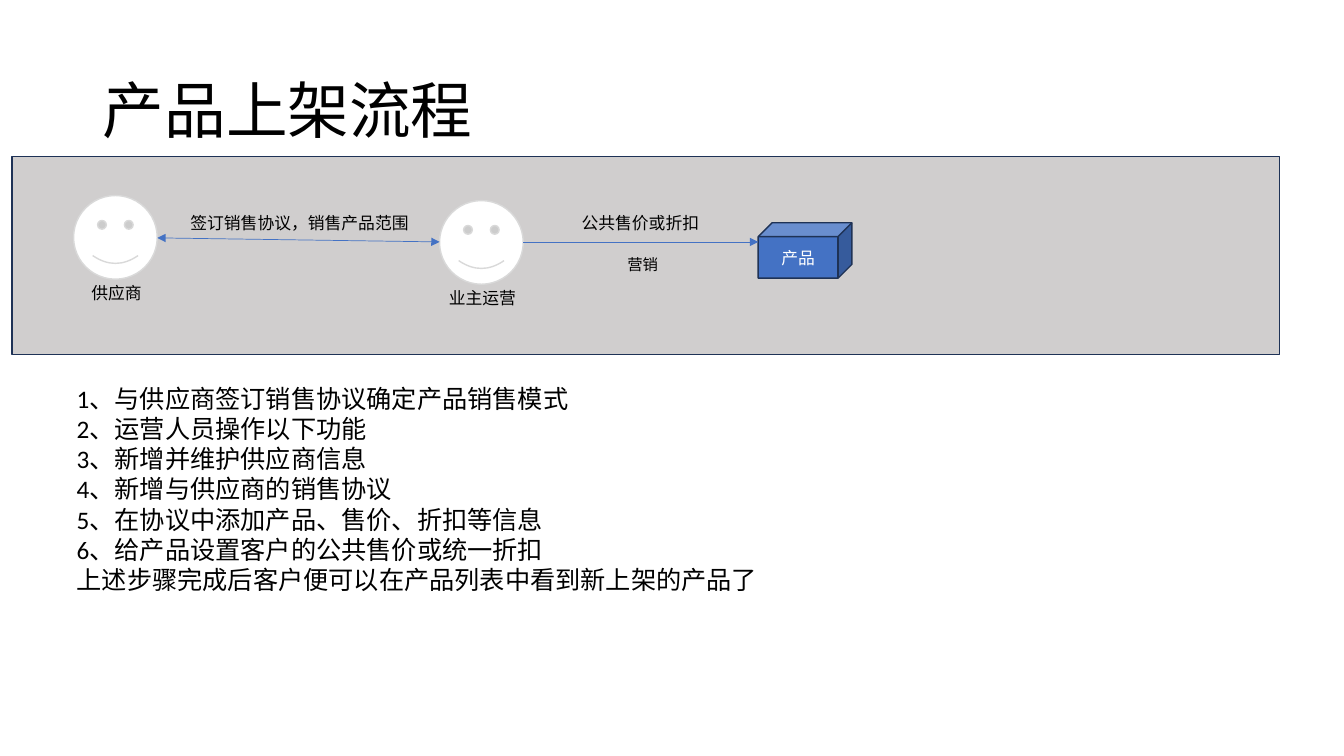
from lxml.etree import SubElement as add_element
from pptx import Presentation
from pptx.dml.color import RGBColor
from pptx.enum.shapes import MSO_CONNECTOR as Connector, MSO_SHAPE as Shape
from pptx.enum.text import MSO_ANCHOR as Anchor, MSO_AUTO_SIZE as AutoSize, PP_ALIGN as Align
from pptx.oxml.ns import qn
from pptx.util import Inches, Pt


def paint(shape, fill, line):
    shape.shadow.inherit = False
    shape.fill.solid()
    shape.fill.fore_color.rgb = RGBColor.from_string(fill)
    shape.line.color.rgb = RGBColor.from_string(line)
    shape.line.width = Pt(1)


def write(shape, lines, size, color="000000", align=Align.LEFT, anchor=Anchor.TOP, spacing=1.0):
    frame = shape.text_frame
    frame.text = "\n".join(lines)
    frame_format = {"word_wrap": True, "auto_size": AutoSize.NONE, "vertical_anchor": anchor}
    for name, value in frame_format.items():
        setattr(frame, name, value)
    paragraph_format = {"alignment": align, "line_spacing": spacing, "space_before": Pt(0)}
    for paragraph in frame.paragraphs:
        for name, value in paragraph_format.items():
            setattr(paragraph, name, value)
        font = paragraph.runs[0].font
        font.name = "Calibri"
        font.size = Pt(size)
        font.color.rgb = RGBColor.from_string(color)


presentation = Presentation()
presentation.slide_width = Inches(13.33)
presentation.slide_height = Inches(7.5)
slide = presentation.slides.add_slide(presentation.slide_layouts[1])
title, steps = slide.placeholders

placeholder_boxes = [(title, (0.92, 0.4, 11.5, 1.45)), (steps, (0.66, 3.75, 12.03, 2.22))]
for placeholder, box in placeholder_boxes:
    for name, value in zip(("left", "top", "width", "height"), box):
        setattr(placeholder, name, Inches(value))

write(title, ["产品上架流程"], 44, anchor=Anchor.MIDDLE, spacing=0.9)
write(steps, [
    "1、与供应商签订销售协议确定产品销售模式",
    "2、运营人员操作以下功能",
    "3、新增并维护供应商信息",
    "4、新增与供应商的销售协议",
    "5、在协议中添加产品、售价、折扣等信息",
    "6、给产品设置客户的公共售价或统一折扣",
    "上述步骤完成后客户便可以在产品列表中看到新上架的产品了",
], 18)
for paragraph in steps.text_frame.paragraphs:
    properties = paragraph._p.get_or_add_pPr()
    properties.set("marL", "0")
    properties.set("indent", "0")
    add_element(properties, qn("a:buNone"))

band = slide.shapes.add_shape(Shape.RECTANGLE, Inches(0.12), Inches(1.55), Inches(12.57), Inches(1.97))
paint(band, "D0CECE", "1E3256")
title.element.addprevious(band.element)

for role, left, top in [("供应商", 0.73, 1.94), ("业主运营", 4.36, 1.99)]:
    person = slide.shapes.add_group_shape()
    face = person.shapes.add_shape(Shape.SMILEY_FACE, Inches(left), Inches(top), Inches(0.83), Inches(0.83))
    paint(face, "FFFFFF", "D9D9D9")
    caption = person.shapes.add_textbox(Inches(left - 0.07), Inches(top + 0.82), Inches(0.99), Inches(0.3))
    write(caption, [role], 12, align=Align.CENTER)

product = slide.shapes.add_shape(Shape.CUBE, Inches(7.52), Inches(2.21), Inches(0.93), Inches(0.55))
paint(product, "4472C4", "1E3256")
write(product, ["产品"], 12, "FFFFFF", Align.CENTER, Anchor.MIDDLE)

arrows = [
    ((1.56, 2.36, 4.36, 2.4), ("headEnd", "tailEnd")),
    ((5.19, 2.4, 7.52, 2.4), ("tailEnd",)),
]
for points, ends in arrows:
    arrow = slide.shapes.add_connector(Connector.STRAIGHT, *map(Inches, points))
    arrow.line.color.rgb = RGBColor.from_string("4472C4")
    arrow.line.width = Pt(0.5)
    for end in ends:
        add_element(arrow.line._get_or_add_ln(), qn(f"a:{end}"), type="triangle")
    add_element(arrow.element.spPr, qn("a:effectLst"))

labels = [
    ("签订销售协议，销售产品范围", (1.79, 2.06, 2.64, 0.3), 12, Align.LEFT),
    ("公共售价或折扣", (5.67, 2.06, 1.58, 0.3), 12, Align.LEFT),
    ("营销", (5.76, 2.48, 1.23, 0.29), 11, Align.CENTER),
]
for text, box, size, align in labels:
    label = slide.shapes.add_textbox(*map(Inches, box))
    write(label, [text], size, align=align)

presentation.save("out.pptx")
